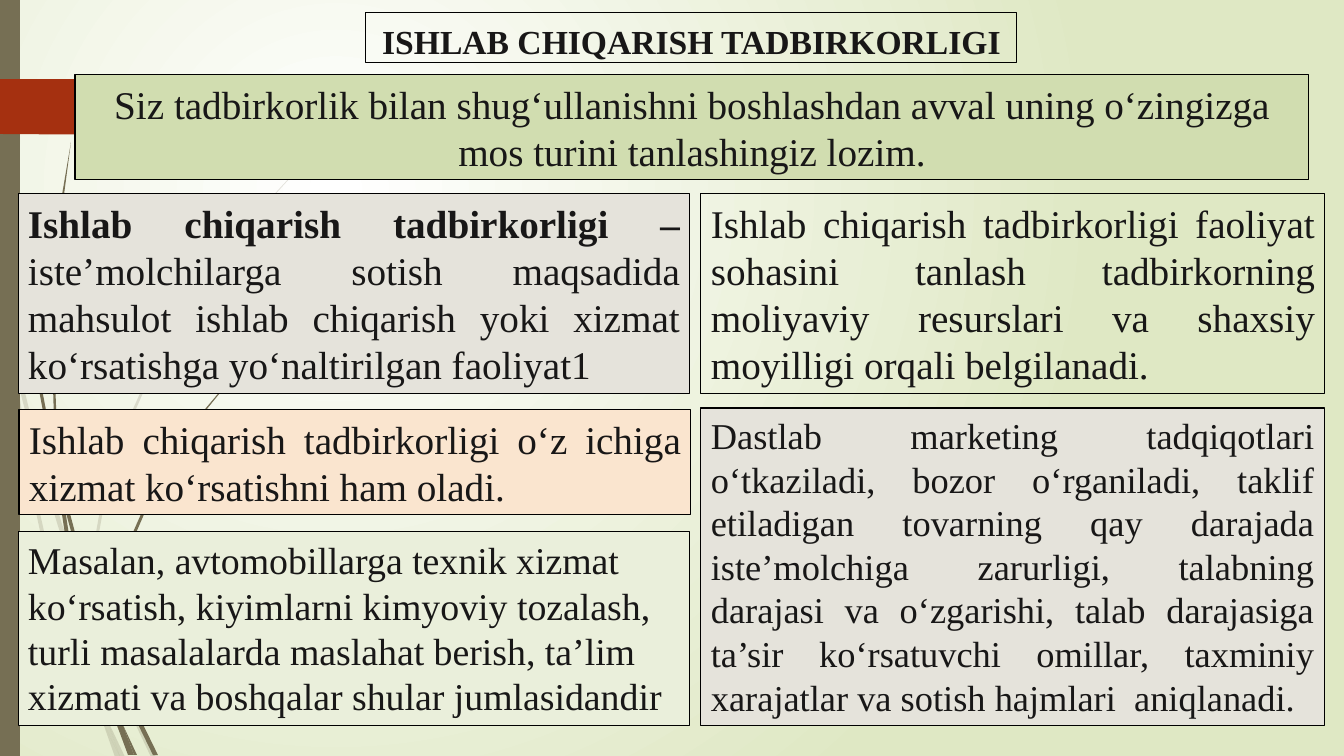
from pptx import Presentation
from pptx.dml.color import RGBColor
from pptx.enum.shapes import MSO_SHAPE
from pptx.enum.text import MSO_AUTO_SIZE, PP_ALIGN
from pptx.oxml import parse_xml
from pptx.oxml.ns import nsdecls, qn
from pptx.util import Pt

CENTER, JUSTIFY, LEFT = PP_ALIGN.CENTER, PP_ALIGN.JUSTIFY, PP_ALIGN.LEFT
RECTANGLE = MSO_SHAPE.RECTANGLE
GROW = MSO_AUTO_SIZE.SHAPE_TO_FIT_TEXT

PX = 914400 / 100.8
SLIDE_W, SLIDE_H = 1344, 756
FONT, INK, BORDER = "Times New Roman", "181717", "000000"
BARK, RUST = "766F54", "A53010"
GLOW_INNER, GLOW_OUTER = "FFFFFF", "DFE8C4"
FAINT = 20

LEFT_X, LEFT_W = 18, 672
RIGHT_X, RIGHT_W = 701, 624
TOP_ROW = 194

# Each run: text, bold, italic
TITLE = [("ISHLAB CHIQARISH TADBIRKORLIGI", True, False)]
INTRO = [("Siz tadbirkorlik bilan shug‘ullanishni boshlashdan avval uning "
          "o‘zingizga mos turini tanlashingiz lozim.", False, False)]
DEFINITION = [
    ("Ishlab chiqarish tadbirkorligi", True, False),
    (" – ", True, True),
    ("iste’molchilarga sotish maqsadida mahsulot ishlab chiqarish yoki xizmat "
     "ko‘rsatishga yo‘naltirilgan faoliyat1", False, False),
]
SERVICES = [("Ishlab chiqarish tadbirkorligi o‘z ichiga xizmat ko‘rsatishni "
             "ham oladi.", False, False)]
EXAMPLES = [("Masalan, avtomobillarga texnik xizmat ko‘rsatish, kiyimlarni "
             "kimyoviy tozalash, turli masalalarda maslahat berish, ta’lim "
             "xizmati va boshqalar shular jumlasidandir", False, False)]
CHOICE = [("Ishlab chiqarish tadbirkorligi faoliyat sohasini tanlash "
           "tadbirkorning moliyaviy resurslari va shaxsiy moyilligi orqali "
           "belgilanadi.", False, False)]
RESEARCH = [("Dastlab marketing tadqiqotlari o‘tkaziladi, bozor o‘rganiladi, "
             "taklif etiladigan tovarning qay darajada iste’molchiga zarurligi, "
             "talabning darajasi va o‘zgarishi, talab darajasiga ta’sir "
             "ko‘rsatuvchi omillar, taxminiy xarajatlar va sotish hajmlari  "
             "aniqlanadi.", False, False)]

# runs, (left, top, width, height), fill, size, alignment
PANELS = [
    (INTRO, (75, 75, 1234, 105), "D1DDB0", 28, CENTER),
    (DEFINITION, (LEFT_X, TOP_ROW, LEFT_W, 200), "E5E3DB", 28, JUSTIFY),
    (SERVICES, (LEFT_X + 1, 410, LEFT_W, 105), "FAE5CF", 28, JUSTIFY),
    (EXAMPLES, (LEFT_X, 532, LEFT_W, 194), "EAEFDB", 27, LEFT),
    (CHOICE, (RIGHT_X, TOP_ROW, RIGHT_W, 200), None, 28, JUSTIFY),
    (RESEARCH, (RIGHT_X, 408, RIGHT_W, 318), "E5E3DB", 26, JUSTIFY),
]
TITLE_BOX = (366, 13, 651, 50)

FAINT_WISPS = [
    [(11, 353), (9, 325), (0, 284), (0, 301), (10, 347)],
    [(58, 526), (85, 604), (86, 591), (62, 524), (36, 437), (14, 348),
     (17, 379), (36, 453)],
    [(93, 612), (89, 601), (89, 615), (124, 700), (151, 757), (156, 757),
     (128, 698)],
    [(120, 757), (125, 757), (106, 717)],
    [(94, 688), (71, 624), (48, 549), (31, 473), (17, 379), (11, 353),
     (28, 474), (44, 550), (66, 626), (93, 699), (102, 720), (100, 713)],
    [(89, 589), (111, 466), (161, 352), (231, 247), (270, 200), (292, 176),
     (314, 155), (314, 154), (291, 176), (270, 199), (230, 246), (159, 351),
     (108, 465), (86, 589), (86, 591), (89, 601)],
    [(102, 720), (115, 757), (120, 757)],
    [(97, 698), (94, 688), (100, 713), (102, 720), (120, 757), (106, 717)],
]
DARK_WISPS = [
    [(7, 111), (17, 235), (33, 358), (56, 481), (57, 485), (55, 461),
     (55, 457), (36, 358), (19, 234), (8, 110), (5, 48), (4, 0), (3, 0),
     (4, 48)],
    [(89, 597), (107, 650), (107, 636), (94, 595), (76, 536), (60, 476),
     (65, 509)],
    [(114, 654), (111, 646), (112, 661), (133, 714), (153, 755), (158, 755),
     (137, 712)],
    [(111, 697), (99, 662), (73, 560), (65, 509), (57, 481), (69, 561),
     (94, 664), (112, 714), (118, 728), (117, 723)],
    [(60, 476), (58, 457), (54, 352), (58, 247), (64, 195), (71, 142),
     (62, 195), (56, 247), (52, 352), (55, 453)],
    [(134, 755), (137, 755), (123, 725)],
    [(112, 638), (126, 556), (159, 480), (207, 409), (233, 377), (247, 362),
     (263, 347), (262, 347), (247, 361), (233, 376), (206, 408), (157, 478),
     (123, 555), (107, 636), (111, 646)],
    [(118, 728), (128, 755), (132, 755)],
    [(107, 650), (111, 697), (117, 712), (123, 725), (122, 722), (112, 661),
     (110, 656)],
    [(117, 712), (111, 697), (117, 723), (118, 728), (131, 755), (134, 755),
     (123, 725)],
]
PAGE_ARROW = [(175, 109), (149, 134), (147, 135), (0, 134), (0, 79),
              (147, 79), (149, 80), (174, 105), (175, 107)]


def px(length):
    return round(length * PX)


def rgb(color):
    return RGBColor.from_string(color)


def paint(shape, color):
    shape.shadow.inherit = False
    shape.fill.solid()
    shape.fill.fore_color.rgb = rgb(color)
    shape.line.fill.background()


def add_outline(slide, points, color, opacity=100):
    """Add a closed filled outline through points given in px."""
    builder = slide.shapes.build_freeform(*points[0], scale=PX)
    builder.add_line_segments(points[1:], close=True)
    outline = builder.convert_to_shape()
    paint(outline, color)
    if opacity < 100:
        tint = outline.element.spPr.find(qn("a:solidFill")).find(qn("a:srgbClr"))
        tint.append(parse_xml(f'<a:alpha {nsdecls("a")} val="{opacity * 1000}"/>'))


def add_background(slide):
    """Fill the slide with a round glow centred in its upper left."""
    slide.background.fill.gradient()
    gradient = slide.element.find(".//" + qn("a:gradFill"))
    glow = parse_xml(
        f'<a:gradFill {nsdecls("a")} rotWithShape="1"><a:gsLst>'
        f'<a:gs pos="0"><a:srgbClr val="{GLOW_INNER}"/></a:gs>'
        f'<a:gs pos="100000"><a:srgbClr val="{GLOW_OUTER}"/></a:gs></a:gsLst>'
        '<a:path path="circle"><a:fillToRect l="50000" t="50000" r="100000" '
        'b="100000"/></a:path></a:gradFill>')
    gradient.getparent().replace(gradient, glow)


def add_panel(slide, runs, box, fill, size, alignment):
    panel = slide.shapes.add_textbox(*map(px, box))
    if fill:
        panel.fill.solid()
        panel.fill.fore_color.rgb = rgb(fill)
    panel.line.color.rgb = rgb(BORDER)
    panel.line.width = Pt(0.75)
    panel.text_frame.word_wrap = True
    panel.text_frame.auto_size = GROW
    paragraph = panel.text_frame.paragraphs[0]
    paragraph.alignment = alignment
    paragraph.font.name = FONT
    paragraph.font.size = Pt(size)
    paragraph.font.color.rgb = rgb(INK)
    for text, bold, italic in runs:
        run = paragraph.add_run()
        run.text = text
        run.font.bold = bold
        run.font.italic = italic
    return panel


def main():
    deck = Presentation()
    deck.slide_width, deck.slide_height = px(SLIDE_W), px(SLIDE_H)
    slide = deck.slides.add_slide(deck.slide_layouts[6])
    add_background(slide)
    for wisp in FAINT_WISPS:
        add_outline(slide, wisp, BARK, FAINT)
    for wisp in DARK_WISPS:
        add_outline(slide, wisp, BARK)
    side_bar = slide.shapes.add_shape(RECTANGLE, 0, 0, px(20), px(SLIDE_H))
    paint(side_bar, BARK)
    add_outline(slide, PAGE_ARROW, RUST)

    title = add_panel(slide, TITLE, TITLE_BOX, None, 24, CENTER).text_frame
    title.word_wrap = False
    title.paragraphs[0].line_spacing = 1.07
    title.paragraphs[0].space_after = Pt(8)
    for panel in PANELS:
        add_panel(slide, *panel)
    deck.save("out.pptx")


if __name__ == "__main__":
    main()
